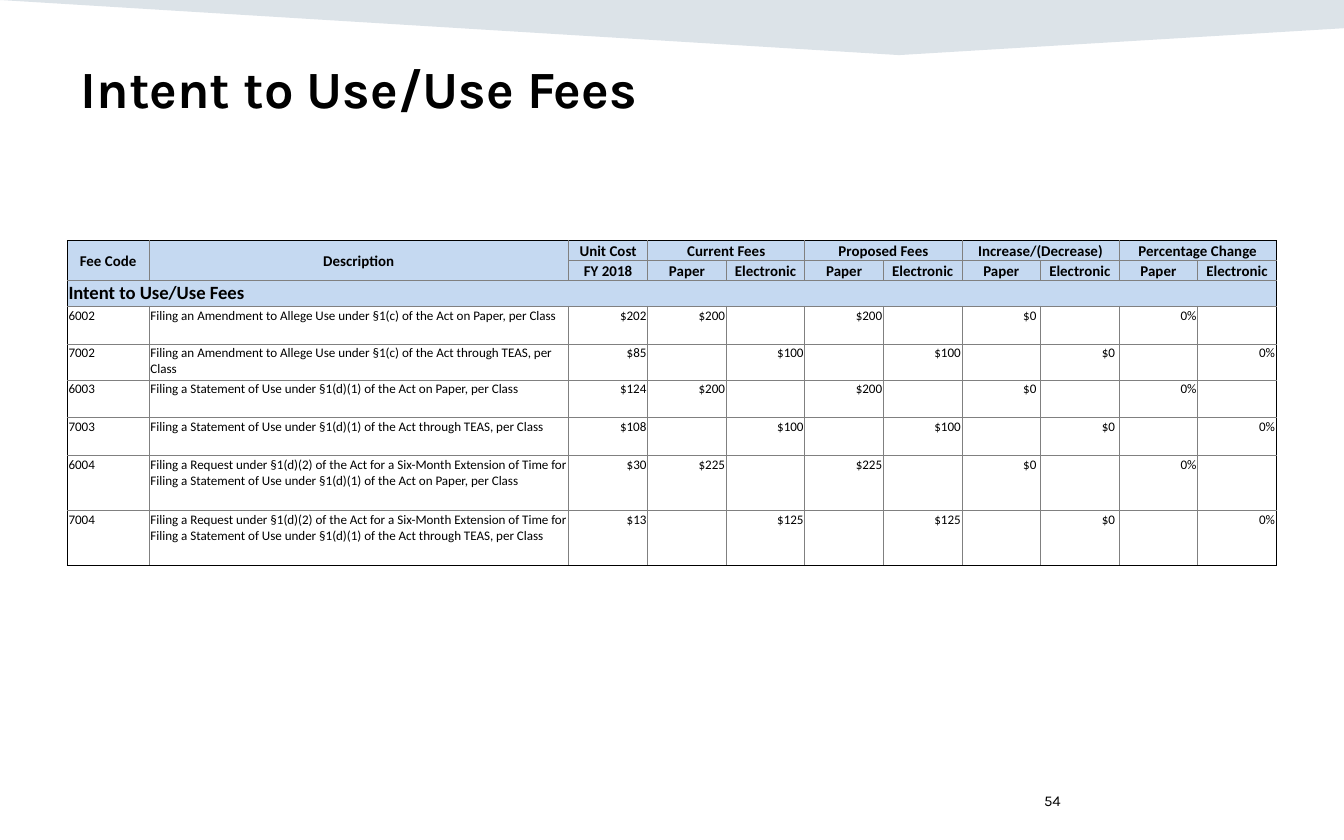
from lxml.etree import SubElement
from pptx import Presentation
from pptx.dml.color import RGBColor
from pptx.enum.text import MSO_ANCHOR, MSO_AUTO_SIZE, PP_ALIGN
from pptx.oxml import parse_xml
from pptx.oxml.ns import nsdecls, qn
from pptx.util import Inches, Pt


def rgb(value):
    return RGBColor.from_string(value)


class FeeSlide:
    """Holds the style and the current slide, and draws each kind of element."""

    BLACK, GRID, HEADER, BANNER = "000000", "808080", "C5D9F1", "164469"
    HEADING = {"name": "Karla", "size": Pt(28), "bold": True}
    NUMBER = {"name": "Karla", "size": Pt(8), "bold": False}
    HEAD = {"name": "Calibri", "size": Pt(8), "bold": True}
    SECTION = {"name": "Calibri", "size": Pt(10), "bold": True}
    BODY = {"name": "Calibri", "size": Pt(7), "bold": False}

    def __init__(self, prs):
        self.slide = prs.slides.add_slide(prs.slide_layouts[5])

    def set_text(self, tf, text, style, align=PP_ALIGN.LEFT):
        p = tf.paragraphs[0]
        p.alignment = align
        if not text:
            SubElement(p._p, qn("a:endParaRPr"), sz=str(int(style["size"].pt * 100)))
            return
        r = p.add_run()
        r.text = text
        for key, value in style.items():
            setattr(r.font, key, value)
        r.font.color.rgb = rgb(self.BLACK)

    def banner(self, points, opacity):
        start, *rest = [(Inches(x), Inches(y)) for x, y in points]
        builder = self.slide.shapes.build_freeform(*start)
        builder.add_line_segments(rest, close=True)
        sp = builder.convert_to_shape()
        sp.shadow.inherit = False
        sp.line.fill.background()
        sp.fill.solid()
        sp.fill.fore_color.rgb = rgb(self.BANNER)
        color = sp._element.spPr.find(qn("a:solidFill"))[0]
        SubElement(color, qn("a:alpha"), val=str(opacity * 1000))
        self.slide.shapes._spTree.insert(2, sp._element)

    def title(self, text, left, top, width, height):
        sp = self.slide.shapes.title
        sp.left, sp.top, sp.width, sp.height = map(Inches, (left, top, width, height))
        tf = sp.text_frame
        tf.auto_size = MSO_AUTO_SIZE.NONE
        tf.vertical_anchor = MSO_ANCHOR.MIDDLE
        self.set_text(tf, text, self.HEADING)

    def page_number(self, text, *box):
        tf = self.slide.shapes.add_textbox(*map(Inches, box)).text_frame
        tf.word_wrap = True
        tf.vertical_anchor = MSO_ANCHOR.MIDDLE
        self.set_text(tf, text, self.NUMBER)

    def borders(self, cell, edges):
        tcPr = cell._tc.get_or_add_tcPr()
        for i, (side, outer) in enumerate(zip("LRTB", edges)):
            color = self.BLACK if outer else self.GRID
            tcPr.insert(i, parse_xml(
                f'<a:ln{side} {nsdecls("a")} w="6350"><a:solidFill>'
                f'<a:srgbClr val="{color}"/></a:solidFill></a:ln{side}>'))

    def cell_format(self, r, c):
        if r < 2:
            anchor = MSO_ANCHOR.BOTTOM if r == 1 and c > 2 else MSO_ANCHOR.MIDDLE
            return self.HEAD, PP_ALIGN.CENTER, anchor
        if r == 2:
            return self.SECTION, PP_ALIGN.LEFT, MSO_ANCHOR.TOP
        return self.BODY, PP_ALIGN.RIGHT if c > 1 else PP_ALIGN.LEFT, MSO_ANCHOR.TOP

    def table(self, rows, widths, heights, merges, left, top):
        n_rows, n_cols = len(heights), len(widths)
        table = self.slide.shapes.add_table(
            n_rows, n_cols, Inches(left), Inches(top),
            Inches(sum(widths)), Inches(sum(heights))).table
        table.first_row = table.horz_banding = False
        for col, width in zip(table.columns, widths):
            col.width = Inches(width)
        for row, height in zip(table.rows, heights):
            row.height = Inches(height)
        for first, last in merges:
            table.cell(*first).merge(table.cell(*last))
        for r, row in enumerate(rows):
            for c, text in enumerate(row):
                cell = table.cell(r, c)
                style, align, anchor = self.cell_format(r, c)
                cell.margin_left = cell.margin_right = cell.margin_top = Inches(0.01)
                cell.margin_bottom = 0
                cell.vertical_anchor = anchor
                if r < 3:
                    cell.fill.solid()
                    cell.fill.fore_color.rgb = rgb(self.HEADER)
                else:
                    cell.fill.background()
                self.set_text(cell.text_frame, text, style, align)
                self.borders(cell, (c == 0, c + cell.span_width == n_cols,
                                    r == 0, r + cell.span_height == n_rows))


def fee_row(code, description, cost, fee):
    values = [fee, fee, "$0 ", "0%"]
    paper = code.startswith("6")
    pairs = [(v, "") if paper else ("", v) for v in values]
    return [code, description, cost, *(v for pair in pairs for v in pair)]


def main():
    prs = Presentation()
    prs.slide_width, prs.slide_height = Inches(10), Inches(6.25)
    s = FeeSlide(prs)
    s.banner([(0, 0), (10, 0), (10, 0.21), (6.69, 0.41)], 15)
    s.title("Intent to Use/Use Fees", 0.5, 0.35, 5.57, 0.61)
    s.page_number("54", 7.67, 5.79, 2.33, 0.33)

    groups = ["Current Fees", "Proposed Fees", "Increase/(Decrease)", "Percentage Change"]
    amendment = "Filing an Amendment to Allege Use under §1(c) of the Act"
    statement = "Filing a Statement of Use under §1(d)(1) of the Act"
    extension = ("Filing a Request under §1(d)(2) of the Act for a Six-Month "
                 "Extension of Time for " + statement)
    on_paper, online = " on Paper, per Class", " through TEAS, per Class"
    rows = [
        ["Fee Code", "Description", "Unit Cost", *(t for g in groups for t in (g, ""))],
        ["", "", "FY 2018", *["Paper", "Electronic"] * len(groups)],
        ["Intent to Use/Use Fees", *[""] * 10],
        fee_row("6002", amendment + on_paper, "$202", "$200"),
        fee_row("7002", amendment + online, "$85", "$100"),
        fee_row("6003", statement + on_paper, "$124", "$200"),
        fee_row("7003", statement + online, "$108", "$100"),
        fee_row("6004", extension + on_paper, "$30", "$225"),
        fee_row("7004", extension + online, "$13", "$125"),
    ]
    lead = [0.61, 3.12, 0.59]
    widths = lead + [(9 - sum(lead)) / 8] * 8
    heights = [0.15, 0.15, 0.19, 0.28, 0.27, 0.28, 0.28, 0.41, 0.41]
    merges = [((0, c), (1, c)) for c in (0, 1)]
    merges += [((0, c), (0, c + 1)) for c in range(3, 11, 2)]
    merges.append(((2, 0), (2, 10)))
    s.table(rows, widths, heights, merges, 0.5, 1.79)
    prs.save("out.pptx")


if __name__ == "__main__":
    main()
